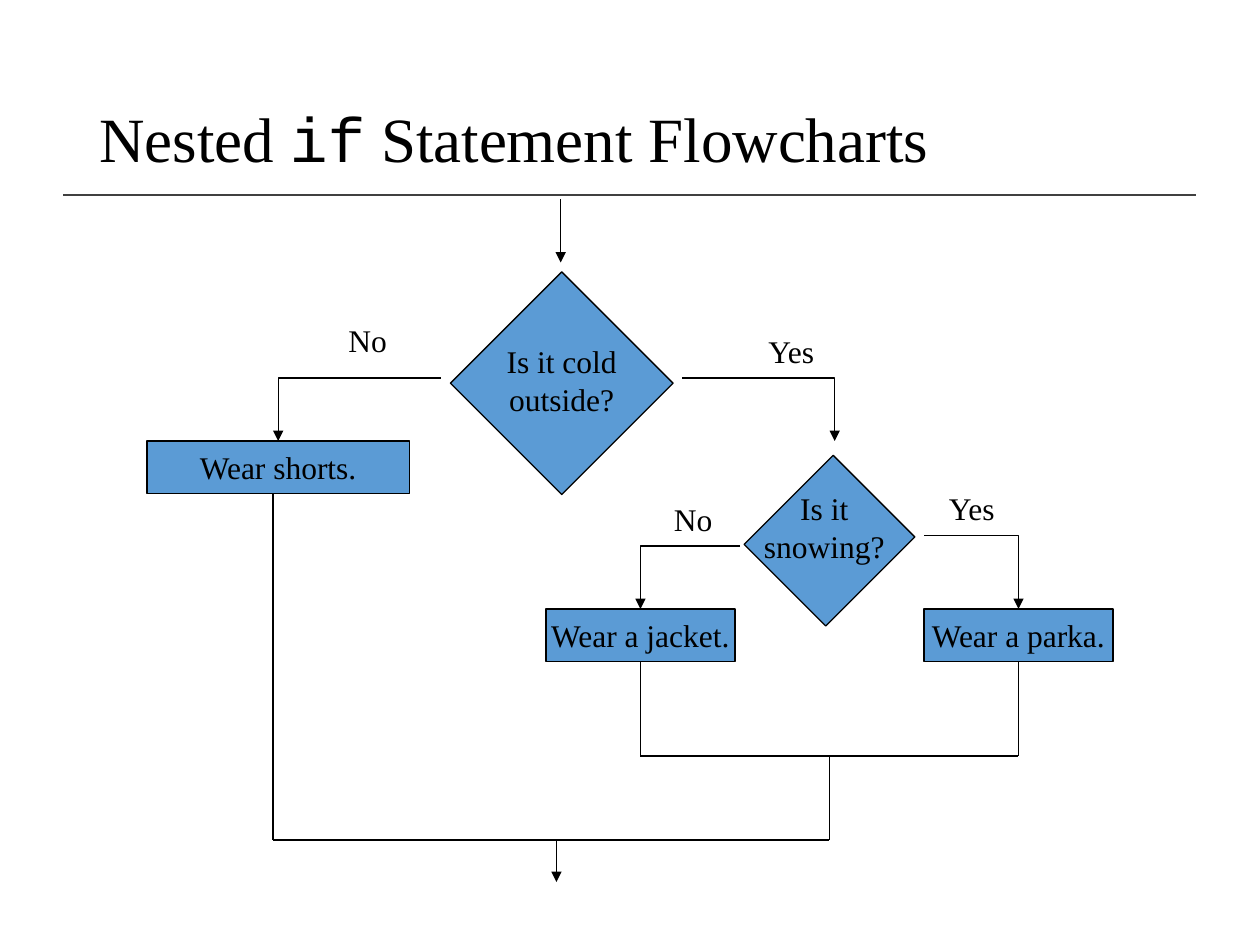
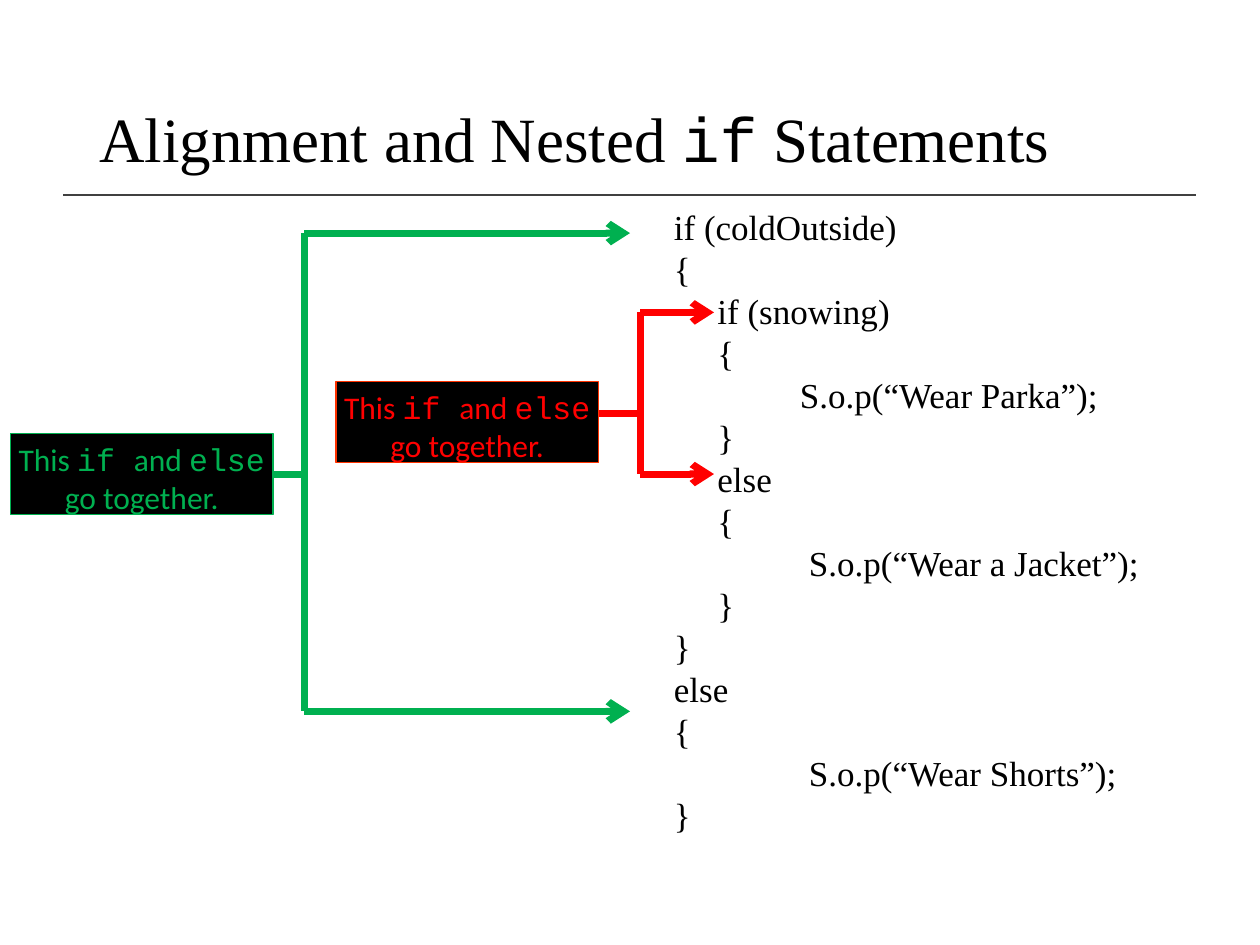
from lxml.etree import SubElement
from pptx import Presentation
from pptx.dml.color import RGBColor
from pptx.enum.shapes import MSO_CONNECTOR as Connector, MSO_SHAPE as Shape
from pptx.enum.text import MSO_ANCHOR as Anchor, MSO_AUTO_SIZE as AutoSize, PP_ALIGN as Align
from pptx.oxml.ns import qn
from pptx.util import Emu, Inches, Pt

COLUMNS, ROWS = 120, 90
SLIDE_WIDTH, SLIDE_HEIGHT = Inches(10), Inches(7.5)
SERIF, SANS, MONO = "Times New Roman", "Calibri", "Courier New"
BLACK, BLUE, GREY = "000000", "5B9BD5", "404040"
RED, ORANGE, GREEN = "FF0000", "FF3300", "00B050"

CODE = [
    (0, "if (coldOutside)"),
    (0, "{"),
    (4.15, "if (snowing)"),
    (4.15, "{"),
    (12, "S.o.p(“Wear Parka”);"),
    (4.15, "}"),
    (4.15, "else"),
    (4.15, "{"),
    (12.85, "S.o.p(“Wear a Jacket”);"),
    (4.15, "}"),
    (0, "}"),
    (0, "else"),
    (0, "{"),
    (12.85, "S.o.p(“Wear Shorts”);"),
    (0, "}"),
]


def color(value):
    return RGBColor.from_string(value)


def across(columns):
    return Emu(round(SLIDE_WIDTH * columns / COLUMNS))


def down(rows):
    return Emu(round(SLIDE_HEIGHT * rows / ROWS))


def place(left, top, width, height):
    return across(left), down(top), across(width), down(height)


def apply(target, formats):
    for name, value in formats.items():
        setattr(target, name, value)


def write(shape, lines, size=18, font=SERIF, fill=BLACK, align=Align.CENTER,
          anchor=Anchor.TOP, wrap=False, spacing=None):
    frame = shape.text_frame
    apply(frame, {"auto_size": AutoSize.NONE, "word_wrap": wrap,
                  "vertical_anchor": anchor})
    for number, line in enumerate(lines):
        paragraph = frame.add_paragraph() if number else frame.paragraphs[0]
        apply(paragraph, {"alignment": align, "line_spacing": spacing})
        for position, text in enumerate(line.split("`")):
            if text:
                run = paragraph.add_run()
                run.text = text
                apply(run.font, {"size": Pt(size), "name": MONO if position % 2 else font})
                run.font.color.rgb = color(fill)


def add_title(slide, text):
    title = slide.shapes.title
    left, top, width, height = place(8.25, 4.8, 103.5, 17.4)
    apply(title, {"left": left, "top": top, "width": width, "height": height})
    write(title, [text], size=36, align=Align.LEFT, anchor=Anchor.MIDDLE,
          wrap=True, spacing=0.9)


def add_line(slide, start, end, stroke=BLACK, weight=0.75, head=None, kind=Connector.STRAIGHT):
    connector = slide.shapes.add_connector(
        kind, across(start[0]), down(start[1]), across(end[0]), down(end[1]))
    connector.line.color.rgb = color(stroke)
    connector.line.width = Pt(weight)
    properties = connector._element.spPr
    if head:
        SubElement(properties.find(qn("a:ln")), qn("a:tailEnd"), type=head)
    SubElement(properties, qn("a:effectLst"))
    return connector


def add_branch(slide, start, end):
    connector = add_line(slide, start, end, head="triangle", kind=Connector.ELBOW)
    connector._element.spPr.find(qn("a:prstGeom")).set("prst", "bentConnector2")


def add_box(slide, area, fill=BLUE, stroke=BLACK):
    box = slide.shapes.add_shape(Shape.RECTANGLE, *place(*area))
    box.shadow.inherit = False
    box.fill.solid()
    box.fill.fore_color.rgb = color(fill)
    box.line.color.rgb = color(stroke)
    box.line.width = Pt(0.75)
    return box


def add_action(slide, area, text):
    action = add_box(slide, area)
    write(action, [text], anchor=Anchor.MIDDLE)
    return action


def add_label(slide, area, *lines, **formats):
    label = slide.shapes.add_textbox(*place(*area))
    write(label, lines, **formats)
    return label


def add_decision(slide, area, label_area, *question):
    add_box(slide, area).rotation = 45
    add_label(slide, label_area, *question)


def add_pairing(slide, area, stem, spine, tip, rows, stroke, border):
    top, middle, bottom = rows
    for row in (top, bottom):
        add_line(slide, (spine, row), (tip, row), stroke, 4, "arrow")
    add_line(slide, (spine, top), (spine, bottom), stroke, 4)
    add_line(slide, (spine, middle), (stem, middle), stroke, 4)
    note = add_box(slide, area, BLACK, border)
    write(note, ["This `if `and `else`", "go together."], font=SANS, fill=stroke)


def add_code(slide, area, lines):
    listing = add_label(slide, area, *[text for _, text in lines],
                        size=20, align=Align.LEFT, wrap=True)
    for paragraph, (indent, _) in zip(listing.text_frame.paragraphs, lines):
        properties = paragraph._p.get_or_add_pPr()
        properties.set("marL", str(across(indent)))
        properties.set("indent", "0")


def share_rule(slide, layout):
    rule = add_line(slide, (6, 18.6), (113.9, 18.6), GREY, 1)
    layout.shapes._spTree.append(rule._element)


def build_flowchart(slide):
    add_title(slide, "Nested `if` Statement Flowcharts")
    add_decision(slide, (46, 29, 15, 15), (47, 32, 13, 8.4), "Is it cold", "outside?")
    add_decision(slide, (73.5, 45.5, 11, 12), (71.5, 46, 14, 8.4), "Is it", "snowing?")

    add_action(slide, (14, 42, 25, 5), "Wear shorts.")
    jacket = add_action(slide, (52, 58, 18, 5), "Wear a jacket.")
    parka = add_action(slide, (88, 58, 18, 5), "Wear a parka.")

    for start, end in [((65, 36), (79.5, 42)), ((42, 36), (26.5, 42)),
                       ((70.5, 52), (61, 58)), ((88, 51), (97, 58))]:
        add_branch(slide, start, end)
    for left, top in [(71.8, 31), (89, 46)]:
        add_label(slide, (left, top, 7.1, 4.8), "Yes")
    for left, top in [(32, 30), (63, 47)]:
        add_label(slide, (left, top, 6.1, 4.8), "No", align=Align.LEFT)

    for action, column in [(jacket, 61), (parka, 97)]:
        add_line(slide, (column, 63), (column, 72)).begin_connect(action, 2)
    for start, end in [((26, 47), (26, 80)), ((61, 72), (97, 72)),
                       ((79, 72), (79, 80)), ((26, 80), (79, 80))]:
        add_line(slide, start, end)
    for start, end in [((53.4, 19), (53.4, 25)), ((53, 80), (53, 84))]:
        add_line(slide, start, end, head="triangle")


def build_alignment(slide):
    add_title(slide, "Alignment and Nested `if` Statements")
    add_pairing(slide, (32, 36.35, 25, 7.7), 54, 61, 68, (29.75, 39.4, 45.15), RED, ORANGE)
    add_pairing(slide, (1, 41.3, 25, 7.7), 21, 29, 60, (22.2, 45.2, 67.75), GREEN, GREEN)
    add_code(slide, (63, 19, 57, 61.8), CODE)


def main():
    presentation = Presentation()
    apply(presentation, {"slide_width": SLIDE_WIDTH, "slide_height": SLIDE_HEIGHT})
    layout = presentation.slide_layouts[5]
    flowchart, alignment = [presentation.slides.add_slide(layout) for _ in range(2)]
    share_rule(flowchart, layout)
    build_flowchart(flowchart)
    build_alignment(alignment)
    presentation.save("out.pptx")


if __name__ == "__main__":
    main()
